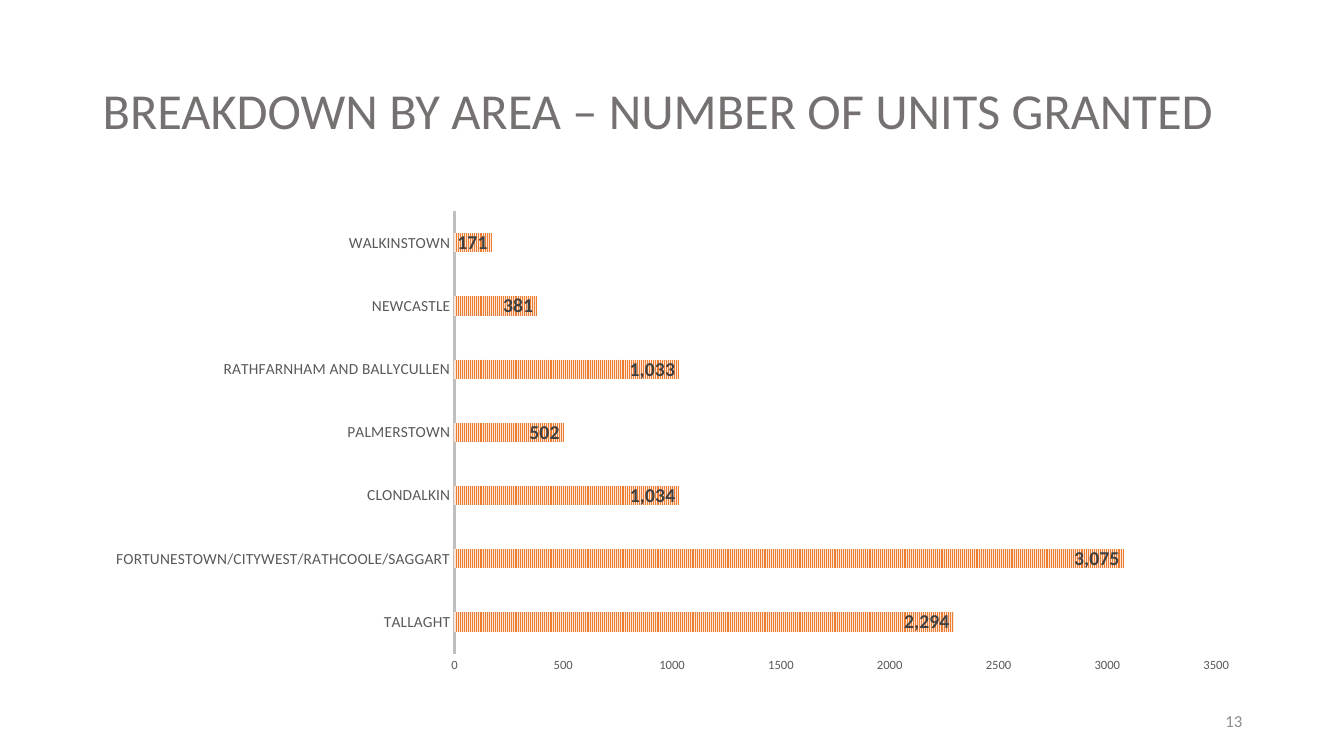
from typing import NamedTuple

import lxml.etree
import pptx
import pptx.chart.data
import pptx.dml.color
import pptx.enum.chart
import pptx.enum.dml
import pptx.enum.text
import pptx.oxml.ns
import pptx.util

SLIDE_WIDTH = pptx.util.Inches(13.33)
SLIDE_HEIGHT = pptx.util.Inches(7.5)
FONT = "Calibri"


class Share(NamedTuple):
    """A rectangle in percent of the width and height around it."""
    left: float
    top: float
    width: float
    height: float


class Area(NamedTuple):
    name: str
    units: int


TITLE = Share(6.9, 5.33, 86.27, 19.33)
PAGE_NUMBER = Share(70.67, 92.67, 22.5, 5.33)
CHART = Share(6.9, 26.67, 86.27, 63.47)
PLOT = Share(31.2, 2, 65.7, 92.2)

AREAS = [
    Area("TALLAGHT", 2294),
    Area("FORTUNESTOWN/CITYWEST/RATHCOOLE/SAGGART", 3075),
    Area("CLONDALKIN", 1034),
    Area("PALMERSTOWN", 502),
    Area("RATHFARNHAM AND BALLYCULLEN", 1033),
    Area("NEWCASTLE", 381),
    Area("WALKINSTOWN", 171),
]


def rgb(hex_colour: str) -> pptx.dml.color.RGBColor:
    return pptx.dml.color.RGBColor.from_string(hex_colour)


def on_slide(share: Share) -> tuple[int, int, int, int]:
    """Turn percentages into slide lengths."""
    return (round(share.left * SLIDE_WIDTH / 100), round(share.top * SLIDE_HEIGHT / 100),
            round(share.width * SLIDE_WIDTH / 100), round(share.height * SLIDE_HEIGHT / 100))


def style_font(font, size: float, colour: str, bold: bool = False) -> None:
    font.name = FONT
    font.size = pptx.util.Pt(size)
    font.bold = bold
    font.color.rgb = rgb(colour)


def add_text(slide, text: str, share: Share, *, size: float, colour: str,
             align=pptx.enum.text.PP_ALIGN.LEFT, line_spacing: float = 1.0) -> None:
    frame = slide.shapes.add_textbox(*on_slide(share)).text_frame
    frame.word_wrap = True
    frame.vertical_anchor = pptx.enum.text.MSO_ANCHOR.MIDDLE
    paragraph = frame.paragraphs[0]
    paragraph.alignment = align
    paragraph.line_spacing = line_spacing
    run = paragraph.add_run()
    run.text = text
    style_font(run.font, size, colour)


def place_plot(chart, share: Share) -> None:
    """Fix the inner plot area within the chart."""
    qn = pptx.oxml.ns.qn
    plot_area = chart.element.find(".//" + qn("c:plotArea"))
    for automatic in plot_area.findall(qn("c:layout")):
        plot_area.remove(automatic)
    layout = lxml.etree.Element(qn("c:layout"))
    plot_area.insert(0, layout)
    manual = lxml.etree.SubElement(layout, qn("c:manualLayout"))
    settings = [("layoutTarget", "inner"), ("xMode", "edge"), ("yMode", "edge")]
    settings += [(tag, f"{part / 100:.3f}") for tag, part in zip("xywh", share)]
    for tag, value in settings:
        lxml.etree.SubElement(manual, qn(f"c:{tag}")).set("val", value)


def style_axis(axis, size: float) -> None:
    axis.has_major_gridlines = False
    axis.major_tick_mark = pptx.enum.chart.XL_TICK_MARK.NONE
    axis.minor_tick_mark = pptx.enum.chart.XL_TICK_MARK.NONE
    style_font(axis.tick_labels.font, size, "595959")


def add_units_chart(slide, areas: list[Area]) -> None:
    data = pptx.chart.data.CategoryChartData(number_format="#,##0")
    data.categories = [area.name for area in areas]
    data.add_series("Series 1", [area.units for area in areas])
    chart = slide.shapes.add_chart(
        pptx.enum.chart.XL_CHART_TYPE.BAR_CLUSTERED, *on_slide(CHART), data).chart
    chart.has_title = False
    chart.has_legend = False
    style_font(chart.font, 10, "000000")
    place_plot(chart, PLOT)

    style_axis(chart.category_axis, 11)
    area_line = chart.category_axis.format.line
    area_line.color.rgb = rgb("BFBFBF")
    area_line.width = pptx.util.Pt(1.5)

    units_axis = chart.value_axis
    style_axis(units_axis, 9)
    units_axis.format.line.fill.background()
    units_axis.minimum_scale = 0
    units_axis.maximum_scale = 3500
    units_axis.major_unit = 500
    units_axis.tick_labels.number_format = "0"
    units_axis.tick_labels.number_format_is_linked = False

    bars = chart.plots[0]
    bars.vary_by_categories = False
    bars.gap_width = 227
    bars.overlap = -48
    units = bars.series[0]
    units.invert_if_negative = False
    stripes = units.format.fill
    stripes.patterned()
    stripes.pattern = pptx.enum.dml.MSO_PATTERN.NARROW_VERTICAL
    stripes.fore_color.rgb = rgb("ED7D31")
    stripes.back_color.rgb = rgb("FBE5D6")
    units.format.line.fill.background()

    labels = units.data_labels
    labels.show_value = True
    labels.position = pptx.enum.chart.XL_LABEL_POSITION.INSIDE_END
    labels.number_format = "#,##0"
    labels.number_format_is_linked = False
    style_font(labels.font, 14, "404040", bold=True)


def main() -> None:
    deck = pptx.Presentation()
    deck.slide_width = SLIDE_WIDTH
    deck.slide_height = SLIDE_HEIGHT
    slide = deck.slides.add_slide(deck.slide_layouts[6])
    add_text(slide, "BREAKDOWN BY AREA – NUMBER OF UNITS GRANTED", TITLE,
             size=36, colour="767171", line_spacing=0.9)
    add_text(slide, "13", PAGE_NUMBER, size=12, colour="8C8C8C",
             align=pptx.enum.text.PP_ALIGN.RIGHT)
    add_units_chart(slide, AREAS)
    deck.save("out.pptx")


if __name__ == "__main__":
    main()
